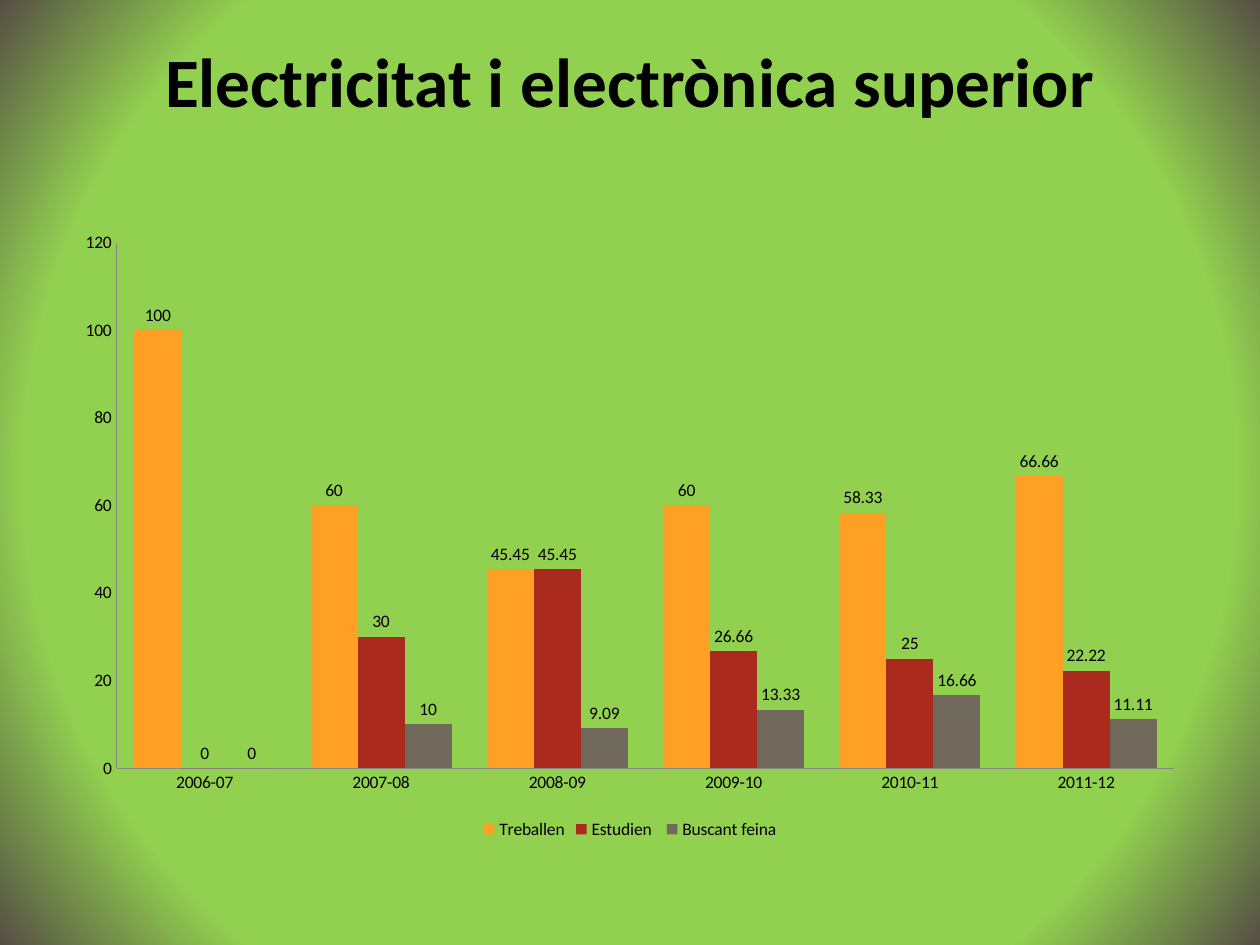
"""Build the slide with the yearly chart for higher electricity and electronics."""
from lxml.etree import SubElement
from pptx import Presentation
from pptx.chart.data import CategoryChartData
from pptx.dml.color import RGBColor
from pptx.enum.chart import XL_CHART_TYPE, XL_LABEL_POSITION, XL_LEGEND_POSITION, XL_TICK_MARK
from pptx.enum.text import MSO_ANCHOR, PP_ALIGN
from pptx.oxml.ns import qn
from pptx.util import Pt

PX = 9144
FONT = "Calibri"
COLORS = {
    "green": "92D050",
    "edge": "554E45",
    "text": "000000",
    "axis": "868686",
    "Treballen": "FDA023",
    "Estudien ": "AA2B1E",
    "Buscant feina": "71685C",
}
YEARS = ["2006-07", "2007-08", "2008-09", "2009-10", "2010-11", "2011-12"]
SERIES = {
    "Treballen": [100, 60, 45.45, 60, 58.33, 66.66],
    "Estudien ": [0, 30, 45.45, 26.66, 25, 22.22],
    "Buscant feina": [0, 10, 9.09, 13.33, 16.66, 11.11],
}


def color(name):
    return RGBColor.from_string(COLORS[name])


deck = Presentation()
deck.slide_width, deck.slide_height = 1000 * PX, 750 * PX
page = deck.slides.add_slide(deck.slide_layouts[5])

background = page.background.fill
background.gradient()
for stop, name, position in zip(background.gradient_stops, ["green", "edge"], [0.77, 1]):
    stop.color.rgb = color(name)
    stop.position = position
gradient = page._element.xpath(".//p:bg//a:gradFill")[0]
gradient.remove(gradient.find(qn("a:lin")))
circle = SubElement(gradient, qn("a:path"), path="circle")
SubElement(circle, qn("a:fillToRect"), l="50000", t="50000", r="50000", b="50000")

title = page.shapes.title
title.left, title.top, title.width, title.height = 50 * PX, 30 * PX, 900 * PX, 125 * PX
frame = title.text_frame
frame.word_wrap = True
frame.vertical_anchor = MSO_ANCHOR.TOP
frame.margin_top = 0
para = frame.paragraphs[0]
para.alignment = PP_ALIGN.CENTER
span = para.add_run()
span.text = "Electricitat i electrònica superior"
span.font.name = FONT
span.font.size = Pt(39.6)
span.font.bold = True
span.font.color.rgb = color("text")

data = CategoryChartData()
data.categories = YEARS
for name, values in SERIES.items():
    data.add_series(name, values)
chart = page.shapes.add_chart(
    XL_CHART_TYPE.COLUMN_CLUSTERED, 50 * PX, 175 * PX, 900 * PX, 495 * PX, data
).chart
chart.has_title = False
chart.font.name = FONT
chart.font.size = Pt(10)
chart.font.color.rgb = color("text")
chart.has_legend = True
chart.legend.position = XL_LEGEND_POSITION.BOTTOM
chart.legend.include_in_layout = False

for axis in (chart.category_axis, chart.value_axis):
    axis.has_major_gridlines = False
    axis.major_tick_mark = XL_TICK_MARK.NONE
    axis.minor_tick_mark = XL_TICK_MARK.NONE
    axis.format.line.color.rgb = color("axis")
    axis.format.line.width = Pt(0.75)
chart.value_axis.minimum_scale = 0
chart.value_axis.maximum_scale = 120
chart.value_axis.major_unit = 20

plot = chart.plots[0]
plot.gap_width = 75
plot.overlap = 0
plot.vary_by_categories = False
for series in plot.series:
    series.format.fill.solid()
    series.format.fill.fore_color.rgb = color(series.name)
    series.invert_if_negative = False
    series.data_labels.show_value = True
    series.data_labels.position = XL_LABEL_POSITION.OUTSIDE_END

deck.save("out.pptx")
